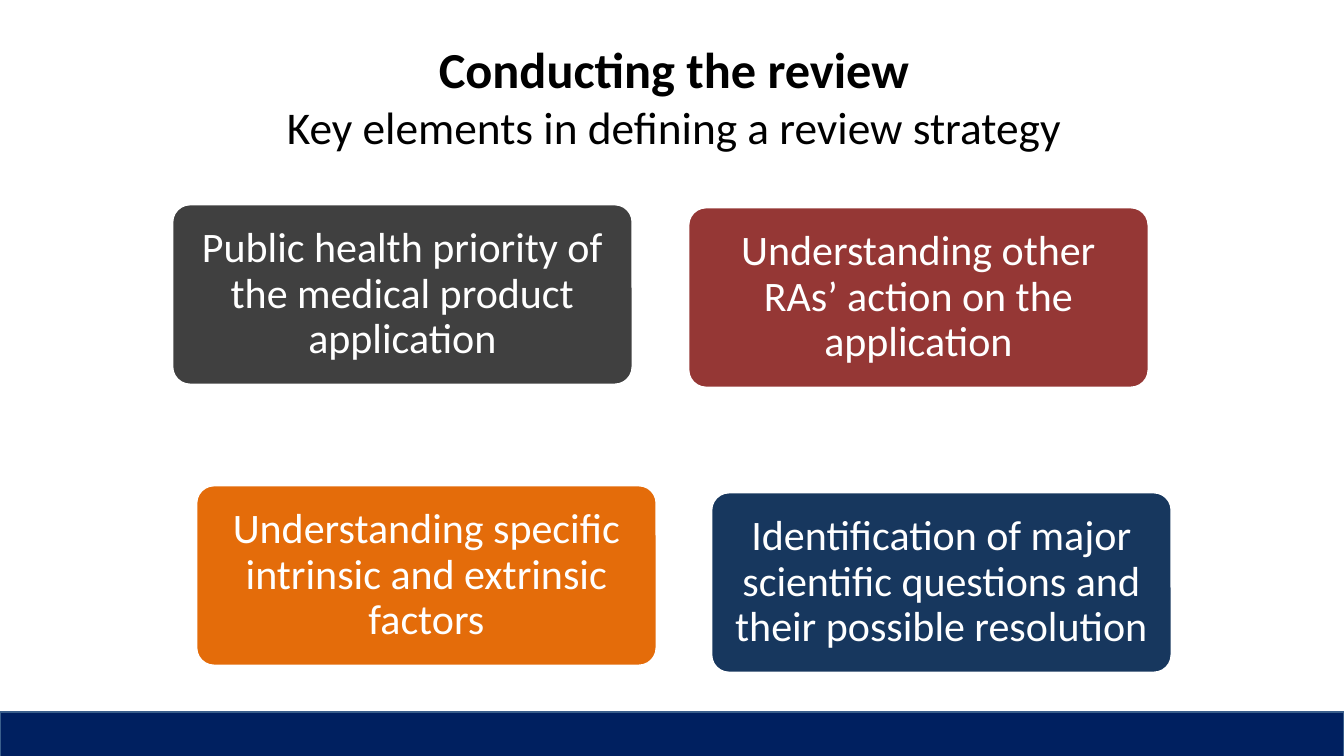
"""Build the slide on key elements of a review strategy."""
from pptx import Presentation
from pptx import util as u
from pptx.dml.color import RGBColor
from pptx.enum import shapes, text

PX = u.Inches(1) / 100.8
FONT = "Calibri"
HUES = {
    "black": "000000",
    "white": "FFFFFF",
    "grey": "404040",
    "red": "953735",
    "orange": "E46C0A",
    "blue": "17375E",
    "navy": "002060",
    "steel": "3A5F8C",
}
HEADS = [("Conducting the review", 36, True),
         ("Key elements in defining a review strategy", 32.4, False)]
CARDS = [
    (196, 485, "orange", "Understanding specific intrinsic and extrinsic factors"),
    (688, 207, "red", "Understanding other RAs’ action on the application"),
    (172, 204, "grey", "Public health priority of the medical product application"),
    (711, 492, "blue",
     "Identification of major scientific questions and their possible resolution"),
]


def px(*nums):
    return [round(n * PX) for n in nums]


def hue(name):
    return RGBColor.from_string(HUES[name])


def style(para, size, name, bold=False):
    para.alignment = text.PP_ALIGN.CENTER
    for run in para.runs:
        font = run.font
        font.name, font.size, font.bold = FONT, u.Pt(size), bold
        font.color.rgb = hue(name)


def add_title(slide):
    title = slide.shapes.title
    title.left, title.top, title.width, title.height = px(174, 23, 1000, 146)
    frame = title.text_frame
    frame.auto_size = text.MSO_AUTO_SIZE.NONE
    frame.vertical_anchor = text.MSO_ANCHOR.MIDDLE
    frame.text = "\n".join(head[0] for head in HEADS)
    for para, (_, size, bold) in zip(frame.paragraphs, HEADS):
        style(para, size, "black", bold)


def add_box(slide, kind, area, fill, edge):
    box = slide.shapes.add_shape(kind, *px(*area))
    box.shadow.inherit = False
    box.fill.solid()
    box.fill.fore_color.rgb = hue(fill)
    box.line.color.rgb = hue(edge)
    box.line.width = u.Pt(2)
    return box


def add_card(slide, left, top, fill, words):
    kind = shapes.MSO_SHAPE.ROUNDED_RECTANGLE
    card = add_box(slide, kind, (left, top, 461, 181), fill, "white")
    card.adjustments[0] = 0.1
    frame = card.text_frame
    frame.word_wrap = True
    frame.vertical_anchor = text.MSO_ANCHOR.MIDDLE
    frame.margin_left = frame.margin_right = px(17)[0]
    frame.margin_top = frame.margin_bottom = px(17)[0]
    frame.text = words
    para = frame.paragraphs[0]
    para.line_spacing = 0.9
    style(para, 30, "white")


def main():
    deck = Presentation()
    deck.slide_width, deck.slide_height = px(1344, 756)
    slide = deck.slides.add_slide(deck.slide_layouts[5])
    add_title(slide)
    for card in CARDS:
        add_card(slide, *card)
    add_box(slide, shapes.MSO_SHAPE.RECTANGLE, (0, 712, 1344, 47), "navy", "steel")
    deck.save("out.pptx")


if __name__ == "__main__":
    main()
